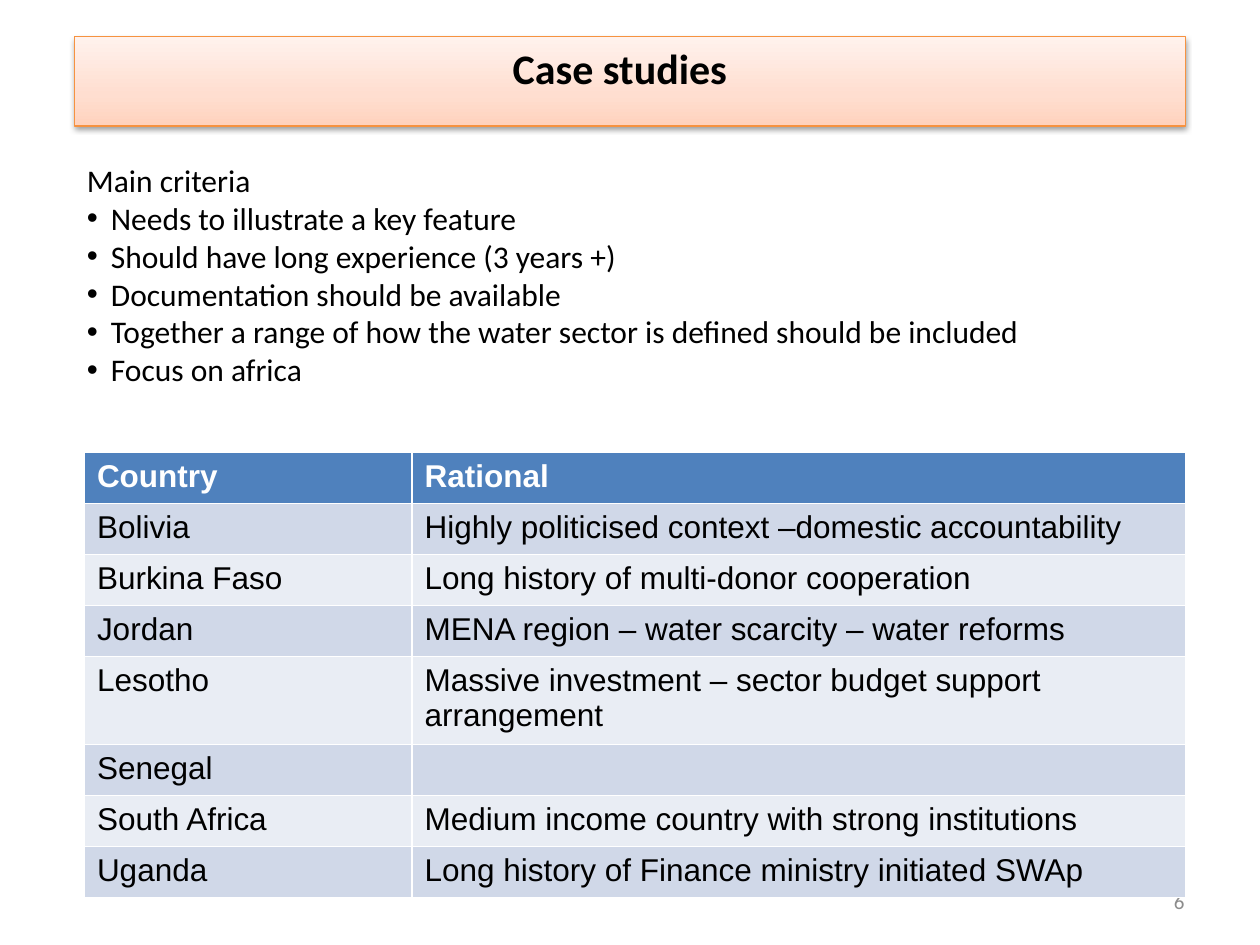
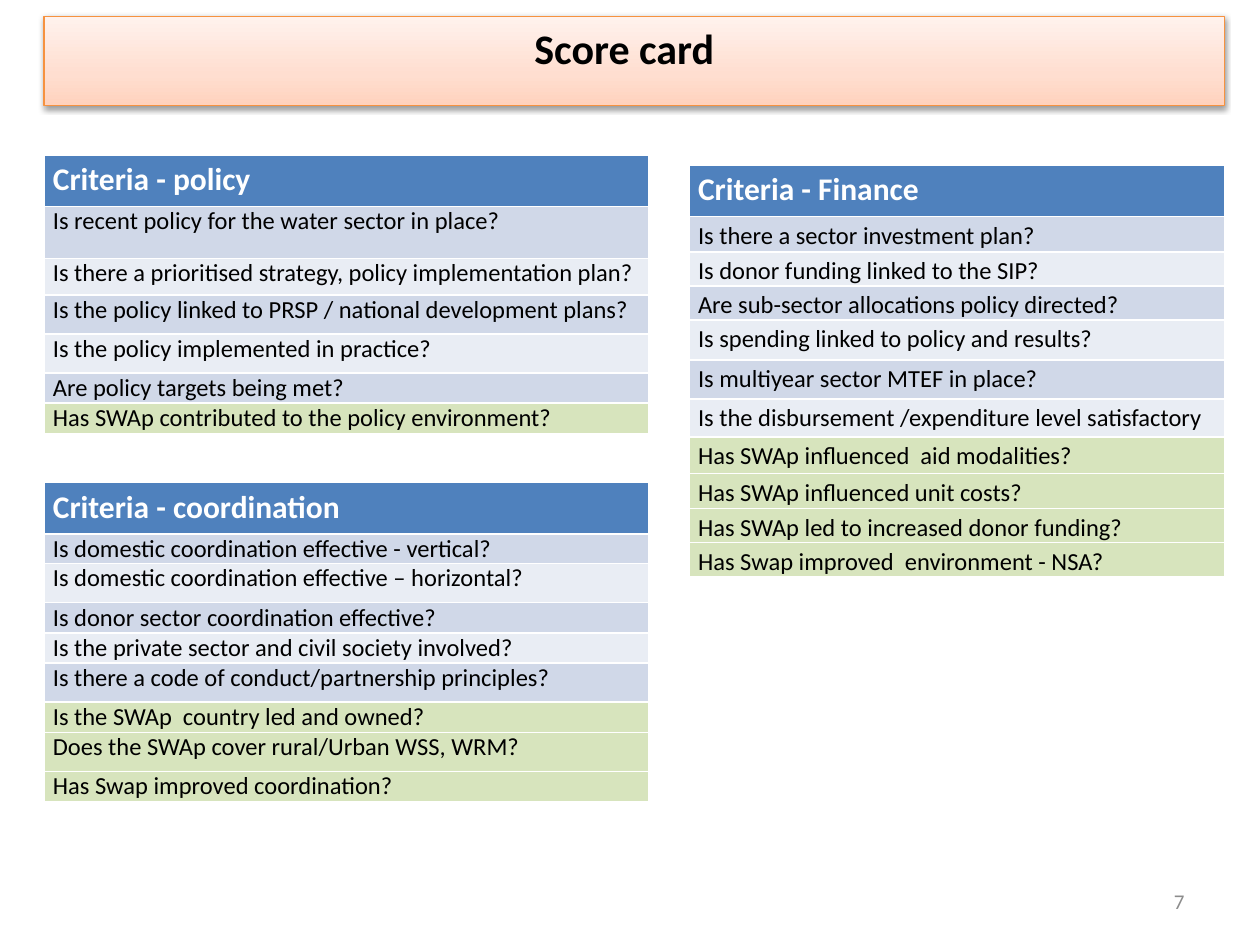
from copy import deepcopy

from lxml import etree
from pptx import Presentation
from pptx.dml.color import RGBColor
from pptx.enum import text as t
from pptx.util import Inches, Pt

HUES = {
    "ink": "000000", "white": "FFFFFF", "page": "8C8C8C", "edge": "F69240",
    "head": "4F81BD", "odd": "D0D8E8", "even": "E9EDF4", "green": "D7E4BD",
}
BLEND = [(0, "FFD2BD"), (0.35, "FFDED0"), (1, "FFF2ED")]
NS = "http://schemas.openxmlformats.org/drawingml/2006/main"
SHADE = (
    f'<a:effectLst xmlns:a="{NS}"><a:outerShdw blurRad="40000" dist="20000" '
    'dir="5400000" rotWithShape="0"><a:srgbClr val="000000">'
    '<a:alpha val="38000"/></a:srgbClr></a:outerShdw></a:effectLst>'
)

BULLETS = [
    "Needs to illustrate a key feature",
    "Should have long experience (3 years +)",
    "Documentation should be available",
    "Together a range of how the water sector is defined should be included",
    "Focus on africa",
]
CASES = [
    ("Country", "Rational"),
    ("Bolivia", "Highly politicised context –domestic accountability"),
    ("Burkina Faso", "Long history of multi-donor cooperation"),
    ("Jordan", "MENA region – water scarcity – water reforms"),
    ("Lesotho", "Massive investment – sector budget support arrangement"),
    ("Senegal", ""),
    ("South Africa", "Medium income country with strong institutions"),
    ("Uganda", "Long history of Finance ministry initiated SWAp"),
]
POLICY = [
    ("Criteria - policy", 0.41),
    ("Is recent policy for the water sector in place?", 0.41),
    ("Is there a prioritised strategy, policy implementation plan?", 0.29),
    ("Is the policy linked to PRSP / national development plans?", 0.31),
    ("Is the policy implemented in practice?", 0.31),
    ("Are policy targets being met?", 0.24),
    ("Has SWAp contributed to the policy environment?", 0.24),
]
FINANCE = [
    ("Criteria - Finance", 0.41),
    ("Is there a sector investment plan?", 0.28),
    ("Is donor funding linked to the SIP?", 0.27),
    ("Are sub-sector allocations policy directed?", 0.26),
    ("Is spending linked to policy and results?", 0.32),
    ("Is multiyear sector MTEF in place?", 0.31),
    ("Is the disbursement /expenditure level satisfactory", 0.3),
    ("Has SWAp influenced  aid modalities?", 0.29),
    ("Has SWAp influenced unit costs?", 0.28),
    ("Has SWAp led to increased donor funding?", 0.26),
    ("Has Swap improved  environment - NSA?", 0.25),
]
TEAMWORK = [
    ("Criteria - coordination", 0.41),
    ("Is domestic coordination effective - vertical?", 0.22),
    ("Is domestic coordination effective – horizontal?", 0.31),
    ("Is donor sector coordination effective?", 0.24),
    ("Is the private sector and civil society involved?", 0.24),
    ("Is there a code of conduct/partnership principles?", 0.31),
    ("Is the SWAp  country led and owned?", 0.24),
    ("Does the SWAp cover rural/Urban WSS, WRM?", 0.31),
    ("Has Swap improved coordination?", 0.24),
]


def paint(color):
    """Return the colour object for a name or a hex string."""
    return RGBColor.from_string(HUES.get(color, color))


def write(para, words, size, color="ink", bold=False, face="Calibri"):
    """Add one formatted run to a paragraph."""
    run = para.add_run()
    run.text = words
    run.font.size = Pt(size)
    run.font.name = face
    run.font.bold = bold
    run.font.color.rgb = paint(color)


def place(shape, box):
    """Move a shape to a box given in inches."""
    shape.left, shape.top, shape.width, shape.height = map(Inches, box)


def banner(slide, words, box):
    """Turn the title placeholder into the shaded band."""
    title = slide.shapes.title
    place(title, box)
    title.fill.gradient()
    title.fill.gradient_angle = 90
    stops = title.fill._xPr.find(f".//{{{NS}}}gsLst")
    stops.append(deepcopy(stops[0]))
    for stop, (spot, color) in zip(title.fill.gradient_stops, BLEND):
        stop.position = spot
        stop.color.rgb = paint(color)
    title.line.color.rgb = paint("edge")
    title.line.width = Pt(0.75)
    title.element.spPr.append(etree.fromstring(SHADE))
    frame = title.text_frame
    frame.auto_size = t.MSO_AUTO_SIZE.NONE
    frame.vertical_anchor = t.MSO_ANCHOR.TOP
    frame.margin_right = Inches(0.26)
    para = frame.paragraphs[0]
    para.alignment = t.PP_ALIGN.CENTER
    write(para, words, 24, bold=True)


def footer(slide, number):
    """Write the page number at the lower right."""
    box = [Inches(n) for n in (7.17, 6.95, 2.33, 0.4)]
    frame = slide.shapes.add_textbox(*box).text_frame
    frame.word_wrap = True
    frame.vertical_anchor = t.MSO_ANCHOR.MIDDLE
    para = frame.paragraphs[0]
    para.alignment = t.PP_ALIGN.RIGHT
    write(para, str(number), 12, "page")


def points(slide, lead, items, box):
    """Fill the body placeholder with a lead line and bullets."""
    body = slide.placeholders[1]
    place(body, box)
    frame = body.text_frame
    frame.auto_size = t.MSO_AUTO_SIZE.NONE
    for i, words in enumerate([lead, *items]):
        para = frame.add_paragraph() if i else frame.paragraphs[0]
        para.space_before = Pt(0)
        props = para._p.get_or_add_pPr()
        props.set("marL", str(Inches(0.19)))
        props.set("indent", str(-Inches(0.19)))
        if i == 0:
            etree.SubElement(props, f"{{{NS}}}buNone")
        write(para, words, 18)


def grid(slide, left, top, cols, rows, heights):
    """Add a table with banded fills and return its rows of cells."""
    size = (sum(cols), sum(heights))
    box = [Inches(n) for n in (left, top, *size)]
    table = slide.shapes.add_table(len(rows), len(cols), *box).table
    for col, width in zip(table.columns, cols):
        col.width = Inches(width)
    for i, (row, high) in enumerate(zip(table.rows, heights)):
        row.height = Inches(high)
        for cell in row.cells:
            cell.fill.solid()
            band = "odd" if i % 2 else "even"
            cell.fill.fore_color.rgb = paint(band if i else "head")
    return [list(row.cells) for row in table.rows]


def cases(slide, left, top):
    """Add the table of countries."""
    high = [3.24 / len(CASES)] * len(CASES)
    cells = grid(slide, left, top, (2.6, 6.14), CASES, high)
    for i, (row, texts) in enumerate(zip(cells, CASES)):
        for cell, words in zip(row, texts):
            if words:
                color = "ink" if i else "white"
                para = cell.text_frame.paragraphs[0]
                write(para, words, 18, color, i == 0, "Arial")


def card(slide, left, top, width, rows, greens, gap=1.0):
    """Add one list of criteria whose last rows are green."""
    high = [row[1] for row in rows]
    cells = grid(slide, left, top, (width,), rows, high)
    for i, ((cell,), (words, _)) in enumerate(zip(cells, rows)):
        cell.margin_left = cell.margin_right = Inches(0.07)
        cell.margin_top = cell.margin_bottom = 0
        para = cell.text_frame.paragraphs[0]
        para.line_spacing = gap if i else 1.15
        if i >= len(rows) - greens:
            cell.fill.fore_color.rgb = paint("green")
        if i:
            write(para, words, 14)
        else:
            write(para, words, 18, "white", True)


def study(deck):
    """Build the slide of case studies."""
    slide = deck.slides.add_slide(deck.slide_layouts[1])
    footer(slide, 6)
    banner(slide, "Case studies", (0.59, 0.29, 8.82, 0.71))
    cases(slide, 0.67, 3.59)
    points(slide, "Main criteria", BULLETS, (0.59, 1.23, 8.82, 1.92))


def score(deck):
    """Build the slide of score cards."""
    slide = deck.slides.add_slide(deck.slide_layouts[5])
    footer(slide, 7)
    banner(slide, "Score card", (0.35, 0.13, 9.37, 0.71))
    card(slide, 0.35, 1.23, 4.8, POLICY, 1)
    card(slide, 5.47, 1.31, 4.25, FINANCE, 4, 1.15)
    card(slide, 0.35, 3.83, 4.8, TEAMWORK, 3)


def main():
    """Build and save the deck."""
    deck = Presentation()
    deck.slide_width, deck.slide_height = Inches(10), Inches(7.5)
    study(deck)
    score(deck)
    deck.save("out.pptx")


if __name__ == "__main__":
    main()
